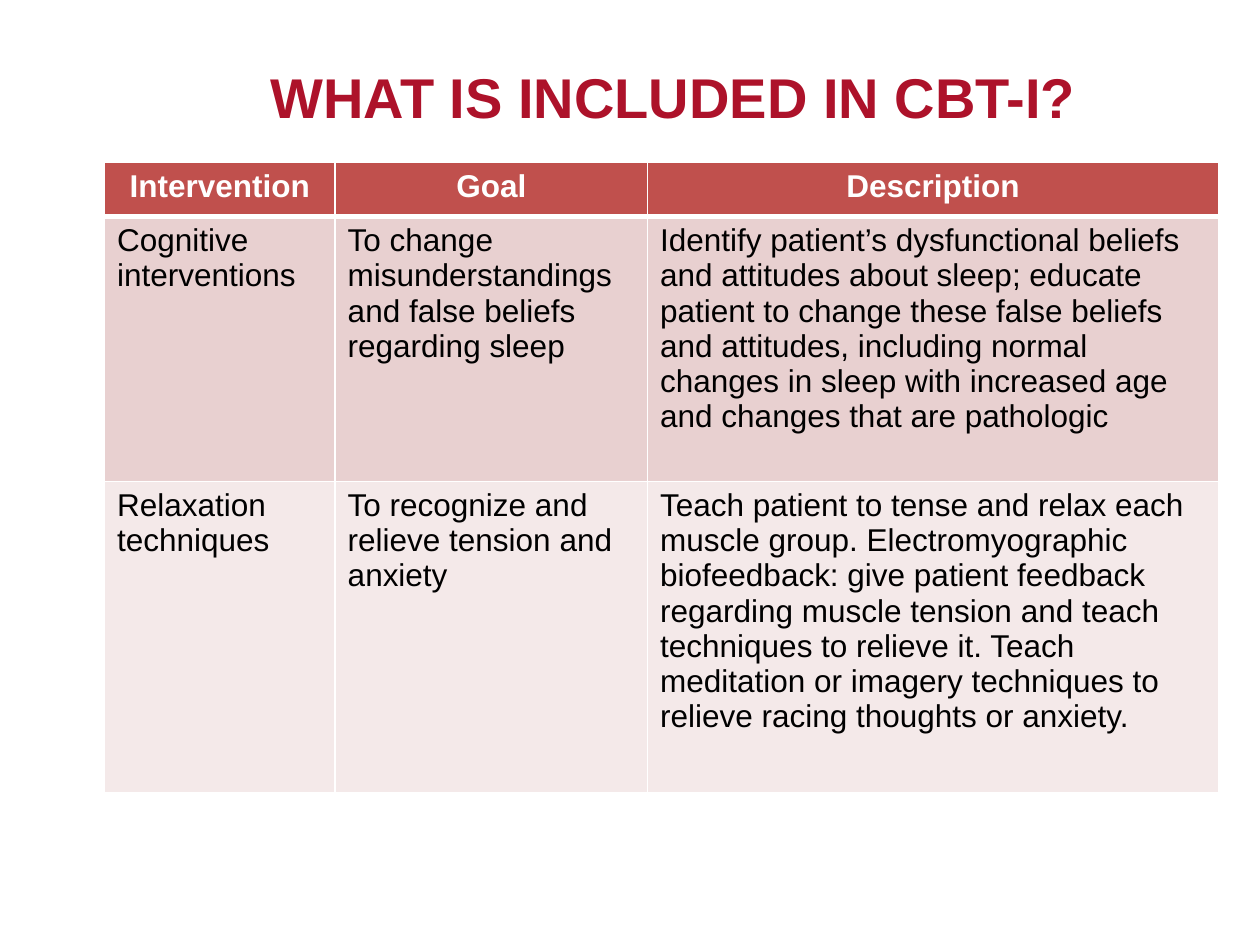
from pptx import Presentation
from pptx.dml.color import RGBColor
from pptx.enum.text import MSO_ANCHOR, PP_ALIGN
from pptx.oxml.xmlchemy import OxmlElement
from pptx.util import Inches, Pt

CENTER, LEFT = PP_ALIGN.CENTER, PP_ALIGN.LEFT
BOTTOM = MSO_ANCHOR.BOTTOM

TITLE = "WHAT IS INCLUDED IN CBT-I?"
ROWS = [
    ("Intervention", "Goal", "Description"),
    (
        "Cognitive interventions",
        "To change misunderstandings and false beliefs regarding sleep",
        "Identify patient’s dysfunctional beliefs and attitudes about sleep; "
        "educate patient to change these false beliefs and attitudes, including "
        "normal changes in sleep with increased age and changes that are pathologic",
    ),
    (
        "Relaxation techniques",
        "To recognize and relieve tension and anxiety",
        "Teach patient to tense and relax each muscle group. Electromyographic "
        "biofeedback: give patient feedback regarding muscle tension and teach "
        "techniques to relieve it. Teach meditation or imagery techniques to "
        "relieve racing thoughts or anxiety.",
    ),
]
WIDTHS = [1.83, 2.48, 4.53]
HEIGHTS = [0.43, 2.1, 2.47]
FILLS = ["head", "dark", "light"]
COLORS = {
    "title": "AD122A",
    "head": "C0504D",
    "dark": "E8D0D0",
    "light": "F4E9E9",
    "white": "FFFFFF",
    "black": "000000",
}


def color(name):
    return RGBColor.from_string(COLORS[name])


def style(font, size, name, bold):
    font.name = "Arial"
    font.size = Pt(size)
    font.bold = bold
    font.color.rgb = color(name)


def border(cell, side, width):
    line = OxmlElement(f"a:{side}")
    line.set("w", str(Pt(width)))
    fill = OxmlElement("a:solidFill")
    tint = OxmlElement("a:srgbClr")
    tint.set("val", COLORS["white"])
    fill.append(tint)
    line.append(fill)
    return line


def add_title(slide):
    box = slide.shapes.add_textbox(Inches(2.05), Inches(0.42), Inches(6.67), Inches(0.62))
    frame = box.text_frame
    frame.word_wrap = True
    frame.vertical_anchor = BOTTOM
    frame.margin_top = frame.margin_bottom = 0
    para = frame.paragraphs[0]
    para.text = TITLE
    para.line_spacing = 0.9
    style(para.font, 32, "title", True)


def add_grid(slide):
    table = slide.shapes.add_table(
        len(ROWS), len(WIDTHS), Inches(0.83), Inches(1.29),
        Inches(sum(WIDTHS)), Inches(sum(HEIGHTS)),
    ).table
    for col, width in zip(table.columns, WIDTHS):
        col.width = Inches(width)
    for r, texts in enumerate(ROWS):
        table.rows[r].height = Inches(HEIGHTS[r])
        head = r == 0
        for c, text in enumerate(texts):
            cell = table.cell(r, c)
            para = cell.text_frame.paragraphs[0]
            para.text = text
            para.alignment = CENTER if head else LEFT
            style(para.font, 18, "white" if head else "black", head)
            cell.fill.solid()
            cell.fill.fore_color.rgb = color(FILLS[r])
            widths = {"lnL": 1, "lnR": 1, "lnT": 3 if r == 1 else 1, "lnB": 3 if head else 1}
            props = cell._tc.get_or_add_tcPr()
            for i, (side, width) in enumerate(widths.items()):
                props.insert(i, border(cell, side, width))


def main():
    deck = Presentation()
    deck.slide_width, deck.slide_height = Inches(10), Inches(7.5)
    slide = deck.slides.add_slide(deck.slide_layouts[6])
    add_title(slide)
    add_grid(slide)
    deck.save("out.pptx")


if __name__ == "__main__":
    main()
